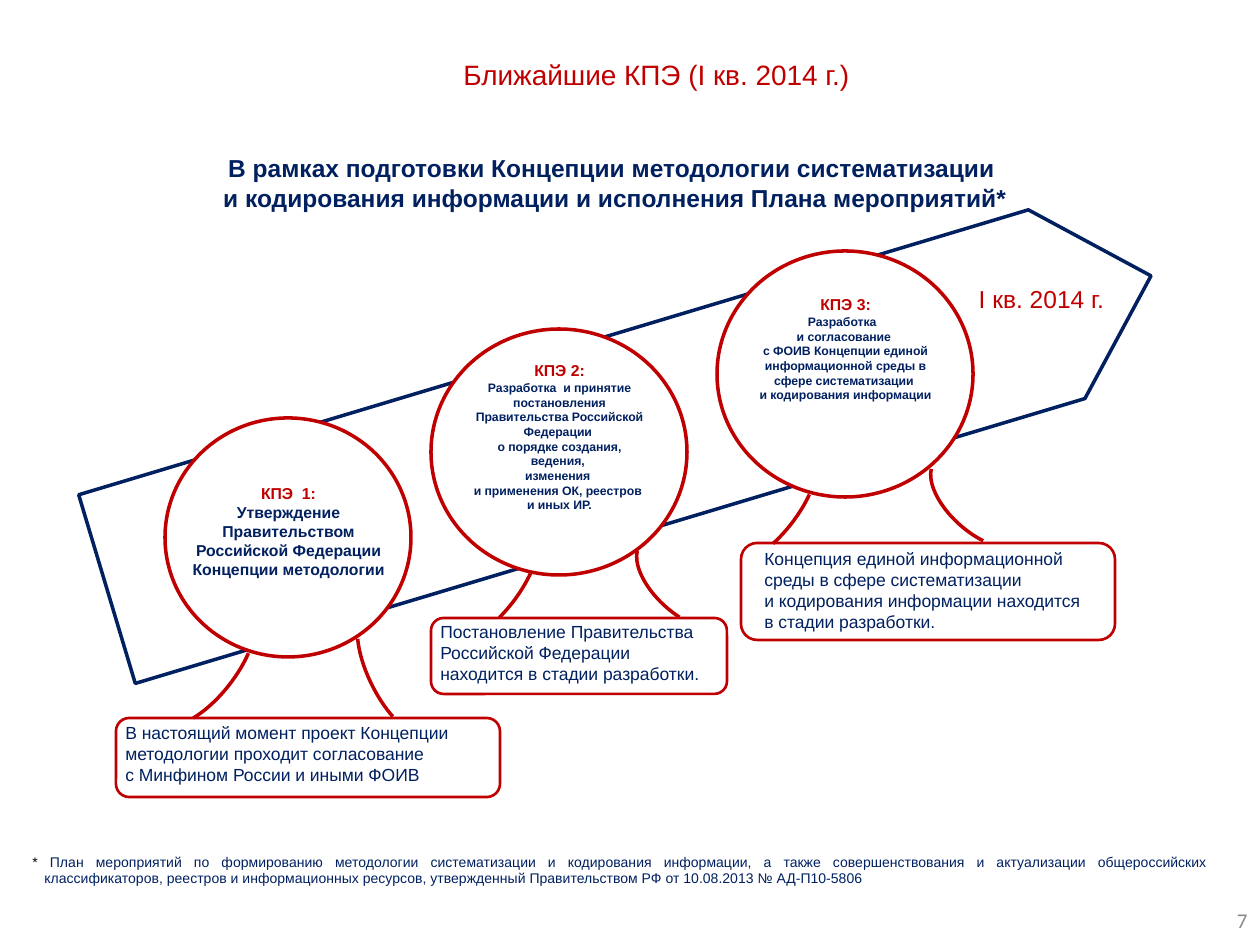
from copy import deepcopy
from dataclasses import dataclass

from pptx import Presentation
from pptx.dml.color import RGBColor
from pptx.enum.shapes import MSO_SHAPE
from pptx.enum.text import MSO_ANCHOR, PP_ALIGN
from pptx.oxml.ns import qn
from pptx.util import Inches, Pt

PX = 914400 / 126
NAVY, RED, GREY, BLACK, WHITE = "002060", "C00000", "898989", "000000", "FFFFFF"

Box = tuple[int, int, int, int]
Run = tuple[str, dict]


@dataclass
class Arc:
    box: Box
    turn: float
    start: float
    end: float


@dataclass
class Step:
    oval: Box
    area: Box
    head: str
    body: str
    size: int
    frame: Box
    note_area: Box
    note: list[str]
    arcs: list[Arc]


STEPS = [
    Step((165, 418, 246, 239), (175, 478, 227, 108), "КПЭ  1:",
         "Утверждение Правительством Российской Федерации Концепции методологии", 9,
         (116, 718, 384, 79), (113, 716, 393, 77),
         ["В настоящий момент проект Концепции  методологии проходит согласование \n"
          "с Минфином России и иными ФОИВ"],
         [Arc((132, 634, 145, 63), 307.9, 205.8, 323.5),
          Arc((328, 640, 145, 63), 63.2, 205.8, 323.5)]),
    Step((431, 329, 256, 246), (461, 355, 197, 192), "КПЭ 2:",
         "Разработка  и принятие постановления Правительства Российской Федерации \n"
         "о порядке создания, ведения, \nизменения \n"
         "и применения ОК, реестров \nи иных ИР.", 7,
         (431, 618, 296, 76), (428, 615, 315, 77),
         ["Постановление Правительства Российской Федерации",
          "находится в стадии разработки."],
         [Arc((415, 552, 145, 63), 307.9, 237, 320.9),
          Arc((626, 552, 122, 63), 41.3, 188.1, 299)]),
    Step((717, 251, 256, 246), (742, 289, 207, 144), "КПЭ 3:",
         "Разработка  \nи согласование \nс ФОИВ Концепции единой информационной "
         "среды в сфере систематизации \nи кодирования информации", 7,
         (741, 543, 374, 97), (752, 542, 364, 97),
         ["Концепция единой информационной среды в сфере систематизации \n"
          "и кодирования информации находится \nв стадии разработки."],
         [Arc((694, 473, 145, 63), 307.9, 227.4, 320.9),
          Arc((920, 470, 122, 63), 41.3, 188.1, 314.5)]),
]


def color(code: str) -> RGBColor:
    return RGBColor.from_string(code)


def scale(box: Box) -> list[int]:
    return [round(n * PX) for n in box]


def add_run(para, text: str, size: int, hue: str, bold: bool, face: str) -> None:
    """Add text whose newlines become line breaks of the same size."""
    for i, part in enumerate(text.split("\n")):
        if i:
            para.add_line_break()
        run = para.add_run()
        run.text = part
        font = run.font
        font.size, font.name, font.bold = Pt(size), face, bold
        font.color.rgb = color(hue)
        if i:
            run._r.getprevious().append(deepcopy(run._r.rPr))


def write(slide, box: Box, paras: list[list[Run]], *, shape=None, size=10, hue=NAVY,
          bold=False, face="Arial", align=PP_ALIGN.LEFT, anchor=MSO_ANCHOR.TOP,
          wrap=True, hang=0, lead=None):
    """Write paragraphs of runs, each run with its own overrides."""
    shape = shape or slide.shapes.add_textbox(0, 0, 0, 0)
    shape.left, shape.top, shape.width, shape.height = scale(box)
    frame = shape.text_frame
    frame.word_wrap, frame.vertical_anchor = wrap, anchor
    base = dict(size=size, hue=hue, bold=bold, face=face)
    for i, runs in enumerate(paras):
        para = frame.add_paragraph() if i else frame.paragraphs[0]
        para.alignment = align
        if lead:
            para.line_spacing = lead
        if hang:
            props = para._p.get_or_add_pPr()
            props.set("marL", str(round(hang * PX)))
            props.set("indent", str(round(-hang * PX)))
        for text, own in runs:
            add_run(para, text, **(base | own))
    return shape


def draw(slide, kind, box: Box, *, line=RED, width=2.0, fill=None, turn=0.0):
    shape = slide.shapes.add_shape(kind, *scale(box))
    shape.shadow.inherit = False
    shape.rotation = turn
    shape.line.color.rgb = color(line)
    shape.line.width = Pt(width)
    if fill:
        shape.fill.solid()
        shape.fill.fore_color.rgb = color(fill)
    else:
        shape.fill.background()
    return shape


def draw_arc(slide, arc: Arc) -> None:
    shape = draw(slide, MSO_SHAPE.ARC, arc.box, turn=arc.turn)
    shape._element.spPr.find(qn("a:xfrm")).set("flipV", "1")
    # Adjustments count in units of 100000, angles in 60000ths of a degree.
    for i, angle in enumerate((arc.start, arc.end)):
        shape.adjustments[i] = angle * 0.6


def draw_step(slide, step: Step) -> None:
    draw(slide, MSO_SHAPE.OVAL, step.oval, fill=WHITE)
    write(slide, step.area,
          [[(step.head, dict(size=9, hue=RED))], [(step.body, {})]],
          size=step.size, bold=True, align=PP_ALIGN.CENTER)
    draw(slide, MSO_SHAPE.ROUNDED_RECTANGLE, step.frame, width=1.5)
    write(slide, step.note_area, [[(text, {})] for text in step.note])
    for arc in step.arcs:
        draw_arc(slide, arc)


def main() -> None:
    deck = Presentation()
    deck.slide_width, deck.slide_height = Inches(10), Inches(7.5)
    slide = deck.slides.add_slide(deck.slide_layouts[5])
    mid = PP_ALIGN.CENTER

    write(slide, (243, 35, 827, 78), [[("Ближайшие КПЭ (I кв. 2014 г.)", {})]],
          shape=slide.shapes.title, size=16, hue=RED, align=mid,
          anchor=MSO_ANCHOR.MIDDLE)
    write(slide, (0, 147, 1230, 72),
          [[("В рамках подготовки Концепции методологии систематизации \n"
             "и кодирования информации и исполнения Плана мероприятий*", {})]],
          size=14, bold=True, align=mid)
    write(slide, (20, 847, 1201, 49),
          [[("* ", dict(hue=BLACK)),
            ("План мероприятий по формированию методологии систематизации и "
             "кодирования информации, а также совершенствования и актуализации "
             "общероссийских классификаторов, реестров и информационных ресурсов, "
             "утвержденный Правительством РФ от 10.08.2013 № АД-П10-5806", {})]],
          size=8, align=PP_ALIGN.JUSTIFY, hang=12)
    write(slide, (966, 895, 294, 50), [[("7", {})]], size=12, hue=GREY,
          face="Calibri", align=PP_ALIGN.RIGHT, anchor=MSO_ANCHOR.MIDDLE)

    draw(slide, MSO_SHAPE.PENTAGON, (84, 334, 1090, 197), line=NAVY, turn=343.3)
    for step in STEPS:
        draw_step(slide, step)
    write(slide, (966, 281, 151, 39), [[("I кв. 2014 г.", {})]], size=14, hue=RED,
          align=mid, wrap=False, lead=0.9)

    deck.save("out.pptx")


if __name__ == "__main__":
    main()
